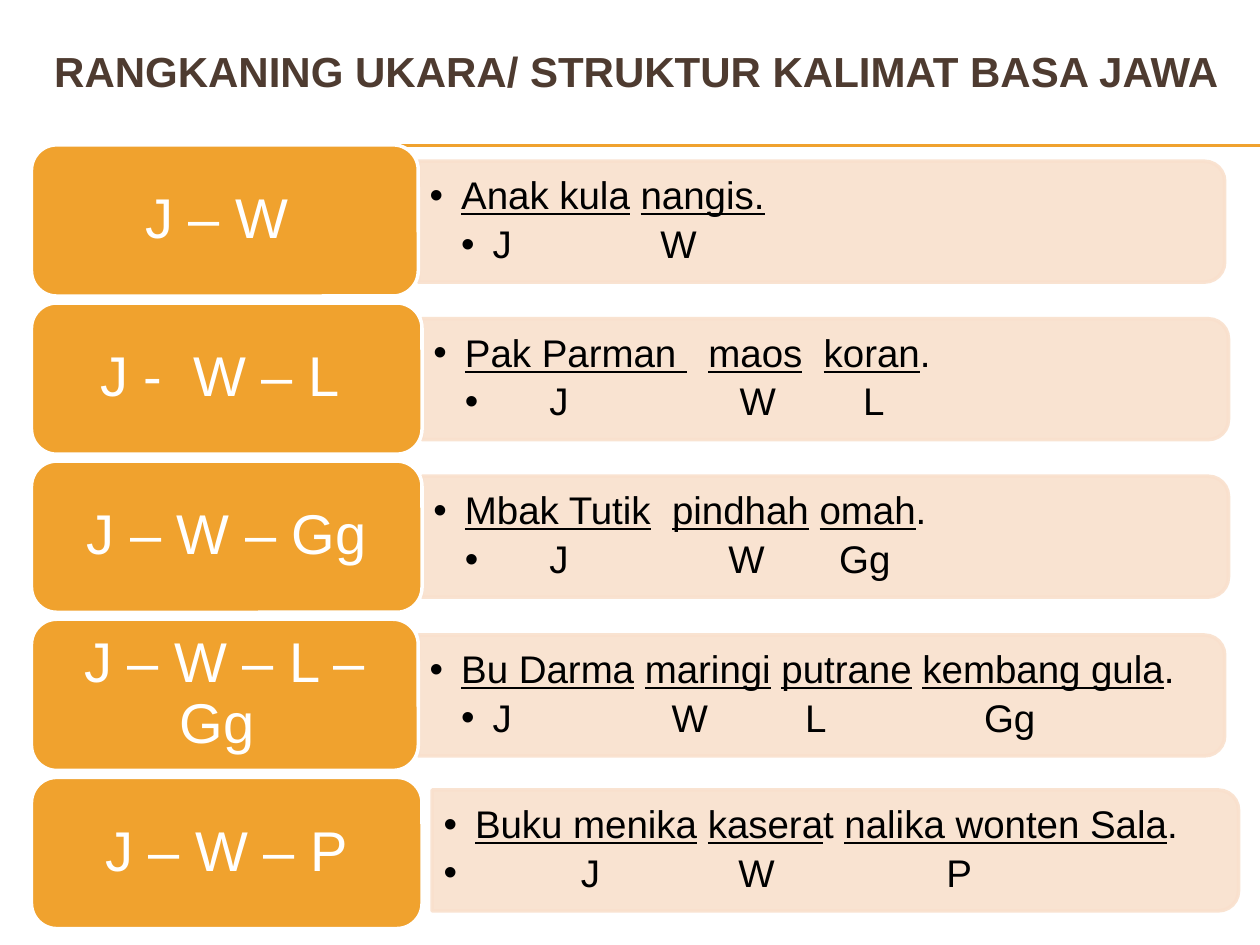
from pptx import Presentation
from pptx.dml.color import RGBColor
from pptx.enum.shapes import MSO_CONNECTOR, MSO_SHAPE
from pptx.enum.text import MSO_ANCHOR, PP_ALIGN
from pptx.oxml.ns import qn
from pptx.util import Inches, Pt
from lxml.etree import SubElement

ORANGE = RGBColor(0xF0, 0xA2, 0x2E)
PEACH = RGBColor(0xF9, 0xE0, 0xCD)
BROWN = RGBColor(0x4E, 0x3B, 0x30)
BLACK = RGBColor(0, 0, 0)
WHITE = RGBColor(255, 255, 255)

ROW_PITCH = 1.255
LABEL_LEFT, LABEL_TOP, LABEL_HEIGHT = 0.25, 1.15, 1.2
PANEL_WIDTH, PANEL_HEIGHT = 6.4, 0.96
EXAMPLE_WIDTH, EXAMPLE_HEIGHT = 6.35, 0.86

# Pattern, label width, panel left, panel top, sentence parts, bullet position,
# and each role with its distance from the left edge of the text.
# Underlined sentence parts stand between underscores.
ROWS = [
    ("J – W ", 3.07, 3.32, 1.28, "_Anak kula_ _nangis._",
     0.25, [("J", 0.5), ("W", 1.83)]),
    ("J -  W – L ", 3.1, 3.35, 2.53, "_Pak Parman _  _maos_  _koran_.",
     0.25, [("J", 0.92), ("W", 2.43), ("L", 3.41)]),
    ("J – W – Gg", 3.1, 3.35, 3.78, "_Mbak Tutik_  _pindhah_ _omah_.",
     0.25, [("J", 0.92), ("W", 2.34), ("Gg", 3.22)]),
    ("J – W – L – Gg ", 3.07, 3.32, 5.04,
     "_Bu Darma_ _maringi_ _putrane_ _kembang gula_.",
     0.25, [("J", 0.5), ("W", 1.92), ("L", 2.98), ("Gg", 4.4)]),
    ("J – W – P", 3.1, 3.43, 6.27,
     "_Buku menika_ _kasera_t _nalika wonten Sala_.",
     0, [("J", 1.09), ("W", 2.34), ("P", 3.99)]),
]


def add_run(paragraph, text, size, color):
    run = paragraph.add_run()
    run.text = text
    run.font.name = "Arial"
    run.font.size = Pt(size)
    run.font.color.rgb = color
    return run


def set_bullet(paragraph, bullet_at, text_at, tab_stops=()):
    """Hang the text behind a bullet; positions are inches from the text edge."""
    paragraph.line_spacing = 0.9
    paragraph.space_after = Pt(4)
    properties = paragraph._p.get_or_add_pPr()
    properties.set("marL", str(Inches(text_at)))
    properties.set("indent", str(Inches(bullet_at - text_at)))
    SubElement(properties, qn("a:buFont"), typeface="Arial")
    SubElement(properties, qn("a:buChar"), char="•")
    if tab_stops:
        tab_list = SubElement(properties, qn("a:tabLst"))
        for stop in tab_stops:
            SubElement(tab_list, qn("a:tab"), pos=str(Inches(stop)), algn="l")


prs = Presentation()
prs.slide_width, prs.slide_height = Inches(10), Inches(7.5)
slide = prs.slides.add_slide(prs.slide_layouts[5])

for y in (1.15, 1.16):
    rule = slide.shapes.add_connector(
        MSO_CONNECTOR.STRAIGHT, Inches(0.56), Inches(y), Inches(10), Inches(y))
    rule.line.color.rgb = ORANGE
    rule.line.width = Pt(0.75)
    SubElement(rule._element.spPr, qn("a:effectLst"))

title = slide.shapes.title
title.left, title.top = Inches(0.33), Inches(0.21)
title.width, title.height = Inches(9.5), Inches(0.71)
title.text_frame.vertical_anchor = MSO_ANCHOR.MIDDLE
heading = title.text_frame.paragraphs[0]
heading.alignment = PP_ALIGN.LEFT
add_run(heading, "RANGKANING UKARA/ STRUKTUR KALIMAT BASA JAWA",
        24, BROWN).font.bold = True

for row, (pattern, label_width, panel_left, panel_top, sentence,
          bullet_at, roles) in enumerate(ROWS):
    # The panel is turned a quarter, so its frame is upright around the same centre.
    turn_shift = (PANEL_WIDTH - PANEL_HEIGHT) / 2
    panel = slide.shapes.add_shape(
        MSO_SHAPE.ROUND_2_SAME_RECTANGLE,
        Inches(panel_left + turn_shift), Inches(panel_top - turn_shift),
        Inches(PANEL_HEIGHT), Inches(PANEL_WIDTH))
    panel.rotation = 90
    panel.shadow.inherit = False
    panel.fill.solid()
    panel.fill.fore_color.rgb = PEACH
    panel.line.color.rgb = PEACH
    panel.line.width = Pt(2)
    for color in panel._element.spPr.iter(qn("a:srgbClr")):
        SubElement(color, qn("a:alpha"), val="90000")

    example = slide.shapes.add_textbox(
        Inches(panel_left), Inches(panel_top + 0.05),
        Inches(EXAMPLE_WIDTH), Inches(EXAMPLE_HEIGHT)).text_frame
    example.word_wrap = True
    example.vertical_anchor = MSO_ANCHOR.MIDDLE
    example.margin_left = example.margin_right = Inches(0.09)
    sentence_line = example.paragraphs[0]
    set_bullet(sentence_line, 0, 0.25)
    for index, part in enumerate(sentence.split("_")):
        if part:
            add_run(sentence_line, part, 22, BLACK).font.underline = index % 2 == 1
    role_line = example.add_paragraph()
    role_line.level = 1 if bullet_at else 0
    role_names, positions = zip(*roles)
    set_bullet(role_line, bullet_at, positions[0], positions[1:])
    add_run(role_line, "\t".join(role_names), 22, BLACK)

    label = slide.shapes.add_shape(
        MSO_SHAPE.ROUNDED_RECTANGLE,
        Inches(LABEL_LEFT), Inches(LABEL_TOP + row * ROW_PITCH),
        Inches(label_width), Inches(LABEL_HEIGHT))
    label.shadow.inherit = False
    label.fill.solid()
    label.fill.fore_color.rgb = ORANGE
    label.line.color.rgb = WHITE
    label.line.width = Pt(2)
    frame = label.text_frame
    frame.word_wrap = True
    frame.vertical_anchor = MSO_ANCHOR.MIDDLE
    frame.margin_left = frame.margin_right = Inches(0.19)
    frame.margin_top = frame.margin_bottom = Inches(0.07)
    pattern_line = frame.paragraphs[0]
    pattern_line.alignment = PP_ALIGN.CENTER
    pattern_line.line_spacing = 0.9
    add_run(pattern_line, pattern, 32, WHITE)

prs.save("out.pptx")
